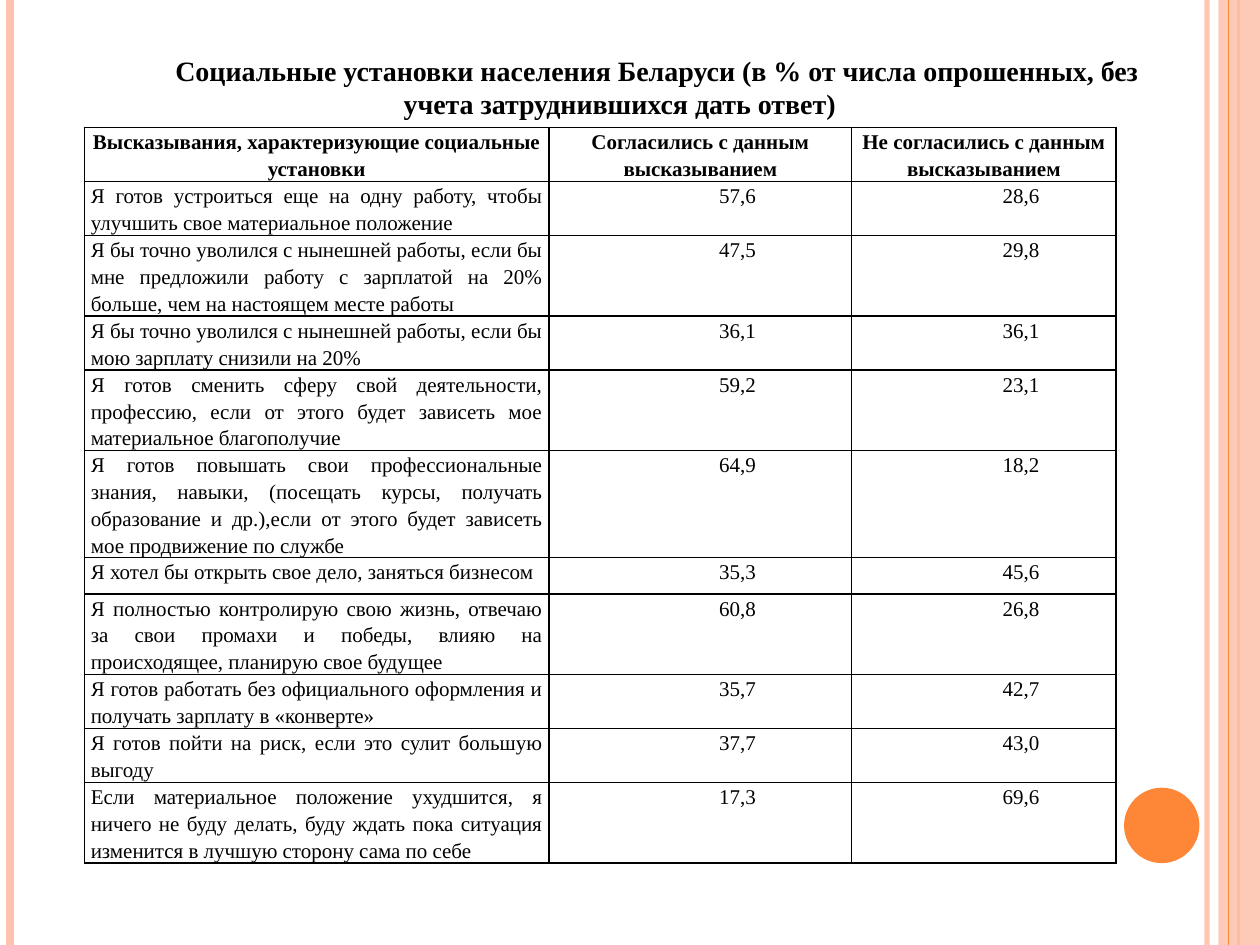
from lxml import etree
from pptx import Presentation
from pptx.dml.color import RGBColor
from pptx.enum import shapes, text
from pptx.oxml import ns
from pptx.util import Cm, Pt


class Theme:
    orange = RGBColor.from_string("FE8637")
    peach = RGBColor.from_string("FEC3AE")
    black = RGBColor.from_string("000000")
    font = "Times New Roman"
    title_size = Pt(16)
    table_size = Pt(12)
    border = Pt(1)


CENTER, JUSTIFY = text.PP_ALIGN.CENTER, text.PP_ALIGN.JUSTIFY
INDENT = Cm(1.5)


def draw_rail(slide, x, color, width, alpha=100):
    """Draw a vertical line down the whole slide; x in cm, alpha in percent."""
    rail = slide.shapes.add_connector(
        shapes.MSO_CONNECTOR.STRAIGHT, Cm(x), 0, Cm(x), Cm(19.05))
    rail.line.color.rgb = color
    rail.line.width = Pt(width)
    etree.SubElement(rail._element.spPr, ns.qn("a:effectLst"))
    if alpha < 100:
        tint = rail._element.spPr.find(".//" + ns.qn("a:srgbClr"))
        etree.SubElement(tint, ns.qn("a:alpha"), val=str(alpha * 1000))


def write_text(frame, wording, size, bold, alignment, indent=0, spacing=1.0):
    paragraph = frame.paragraphs[0]
    paragraph.alignment = alignment
    paragraph.line_spacing = spacing
    properties = paragraph._p.get_or_add_pPr()
    properties.set("marL", "0")
    properties.set("indent", str(int(indent)))
    run = paragraph.add_run()
    run.text = wording
    run.font.color.rgb = Theme.black
    for name, value in {"name": Theme.font, "size": size, "bold": bold}.items():
        setattr(run.font, name, value)


presentation = Presentation()
presentation.slide_width, presentation.slide_height = Cm(25.4), Cm(19.05)
slide = presentation.slides.add_slide(presentation.slide_layouts[6])

# Side stripes and circle
draw_rail(slide, 24.33, Theme.peach, 3, alpha=93)
draw_rail(slide, 0.2, Theme.peach, 4.5)
draw_rail(slide, 24.97, Theme.orange, 1.5)
decorations = [
    (shapes.MSO_SHAPE.RECTANGLE, (24.56, 0, 0.84, 19.05), Theme.peach, 87),
    (shapes.MSO_SHAPE.OVAL, (22.66, 15.88, 1.52, 1.52), Theme.orange, 100),
]
for preset, box, color, alpha in decorations:
    shape = slide.shapes.add_shape(preset, *map(Cm, box))
    shape.shadow.inherit = False
    shape.fill.solid()
    shape.fill.fore_color.rgb = color
    shape.line.fill.background()
    if alpha < 100:
        tint = shape._element.spPr.find(".//" + ns.qn("a:srgbClr"))
        etree.SubElement(tint, ns.qn("a:alpha"), val=str(alpha * 1000))
draw_rail(slide, 24.77, Theme.orange, 0.75)

# Survey table: row height in cm, then the three cells
rows = [
    (1.09, "Высказывания, характеризующие социальные установки",
     "Согласились с данным высказыванием", "Не согласились с данным высказыванием"),
    (1.09, "Я готов устроиться еще на одну работу, чтобы улучшить свое материальное "
     "положение", "57,6", "28,6"),
    (1.62, "Я бы точно уволился с нынешней работы, если бы мне предложили работу с "
     "зарплатой на 20% больше, чем на настоящем месте работы", "47,5", "29,8"),
    (1.09, "Я бы точно уволился с нынешней работы, если бы мою зарплату снизили на 20%",
     "36,1", "36,1"),
    (1.62, "Я готов сменить сферу свой деятельности, профессию, если от этого будет "
     "зависеть мое материальное благополучие", "59,2", "23,1"),
    (2.16, "Я готов повышать свои профессиональные знания, навыки, (посещать курсы, "
     "получать образование и др.),если от этого будет зависеть мое продвижение по службе",
     "64,9", "18,2"),
    (0.73, "Я хотел бы открыть свое дело, заняться бизнесом", "35,3", "45,6"),
    (1.62, "Я полностью контролирую свою жизнь, отвечаю за свои промахи и победы, "
     "влияю на происходящее, планирую свое будущее", "60,8", "26,8"),
    (1.09, "Я готов работать без официального оформления и получать зарплату в "
     "«конверте»", "35,7", "42,7"),
    (1.09, "Я готов пойти на риск, если это сулит большую выгоду", "37,7", "43,0"),
    (1.62, "Если материальное положение ухудшится, я ничего не буду делать, буду ждать "
     "пока ситуация изменится в лучшую сторону сама по себе", "17,3", "69,6"),
]
column_widths = [9.37, 6.1, 5.33]
cell_format = {"margin_left": Cm(0.13), "margin_right": Cm(0.13),
               "margin_top": 0, "margin_bottom": 0}

table = slide.shapes.add_table(
    len(rows), len(column_widths), Cm(1.7), Cm(2.57),
    Cm(sum(column_widths)), Cm(sum(row[0] for row in rows))).table
table.first_row = table.horz_banding = False
for column, width in zip(table.columns, column_widths):
    column.width = Cm(width)

for row_index, (height, *wordings) in enumerate(rows):
    table.rows[row_index].height = Cm(height)
    for column_index, wording in enumerate(wordings):
        cell = table.cell(row_index, column_index)
        for name, value in cell_format.items():
            setattr(cell, name, value)
        cell.fill.background()
        header, statement = row_index == 0, column_index == 0
        write_text(cell.text_frame, wording, Theme.table_size, header,
                   JUSTIFY if statement and not header else CENTER,
                   0 if header or statement else INDENT, spacing=1.15)
        cell_properties = cell._tc.get_or_add_tcPr()
        for position, side in enumerate(("lnL", "lnR", "lnT", "lnB")):
            border = etree.Element(ns.qn("a:" + side), w=str(int(Theme.border)))
            fill = etree.SubElement(border, ns.qn("a:solidFill"))
            etree.SubElement(fill, ns.qn("a:srgbClr"), val=str(Theme.black))
            cell_properties.insert(position, border)

# Title
title = slide.shapes.add_textbox(Cm(1.09), Cm(0.94), Cm(22.81), Cm(1.63))
title_format = {"word_wrap": True, "vertical_anchor": text.MSO_ANCHOR.MIDDLE,
                "auto_size": text.MSO_AUTO_SIZE.SHAPE_TO_FIT_TEXT}
for name, value in title_format.items():
    setattr(title.text_frame, name, value)
write_text(title.text_frame,
           "Социальные установки населения Беларуси (в % от числа опрошенных, без "
           "учета затруднившихся дать ответ)",
           Theme.title_size, True, CENTER, INDENT)

presentation.save("out.pptx")
